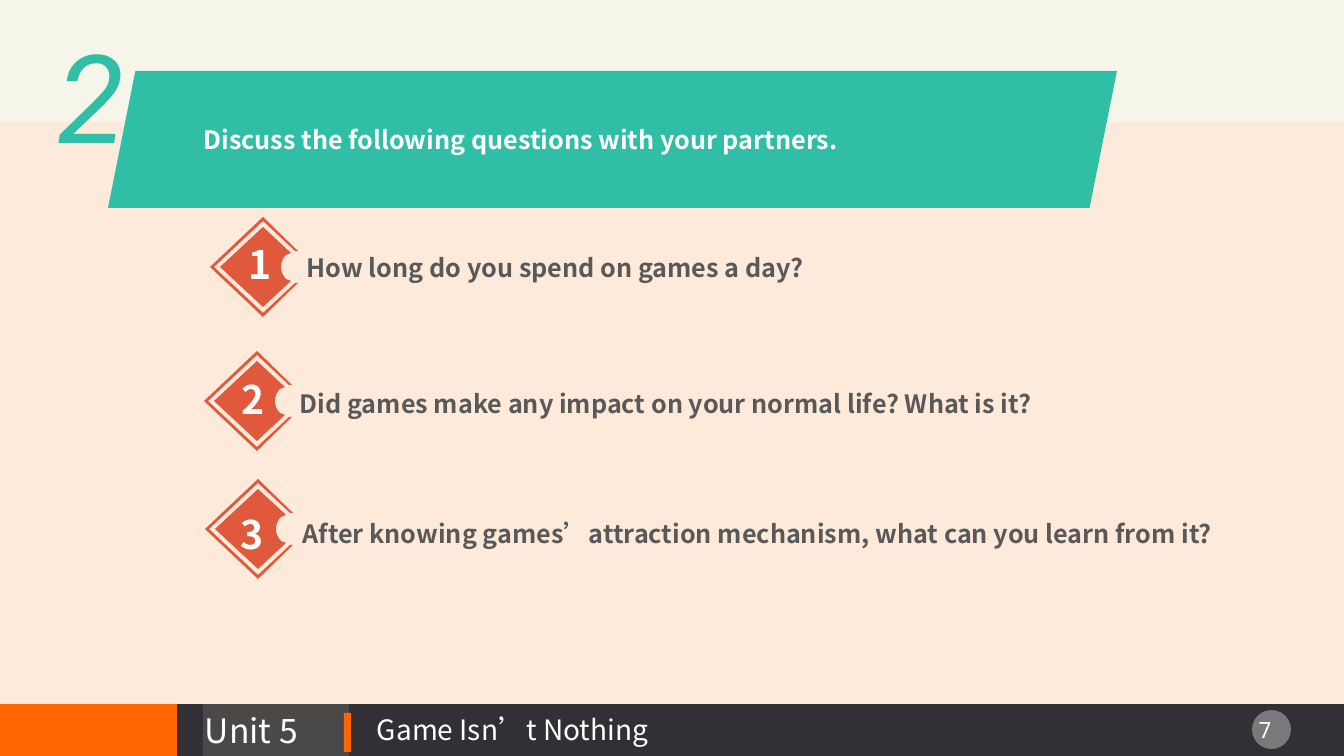
"""Builds the discussion slide with three numbered questions and a unit footer."""
from math import cos, radians, sin

from lxml import etree
from pptx import Presentation
from pptx.dml.color import RGBColor
from pptx.enum.shapes import MSO_SHAPE
from pptx.enum.text import MSO_ANCHOR, PP_ALIGN
from pptx.oxml.ns import qn
from pptx.util import Emu, Pt

RECT, OVAL = MSO_SHAPE.RECTANGLE, MSO_SHAPE.OVAL
PARALLELOGRAM = MSO_SHAPE.PARALLELOGRAM
LEFT, CENTER = PP_ALIGN.LEFT, PP_ALIGN.CENTER
TOP, MIDDLE = MSO_ANCHOR.TOP, MSO_ANCHOR.MIDDLE
SANS = "Noto Sans CJK SC"
CREAM, PEACH, TEAL, RED = "F5F5EA", "FDEADA", "31BEA6", "E0593C"
ORANGE, DARK, GREY, WHITE = "FF6600", "323034", "595959", "FFFFFF"
QUESTIONS = [
    ("1", (263, 267), (239, 235), (297, 247), "How long do you spend on games a day?"),
    ("2", (257, 401), (232, 370), (290, 383),
     "Did games make any impact on your normal life? What is it?"),
    ("3", (258, 529), (231, 505), (293, 513),
     "After knowing games’attraction mechanism, what can you learn from it?"),
]


def px(n):
    """Turn pixels into EMU."""
    return Emu(round(n * 914400 / 100.8))


def rgb(color):
    """Turn a hex string into a colour."""
    return RGBColor.from_string(color)


def paint(sp, color, alpha=None):
    """Give a shape a flat fill, with no line or shadow."""
    sp.shadow.inherit = False
    sp.line.fill.background()
    sp.fill.solid()
    sp.fill.fore_color.rgb = rgb(color)
    if alpha:
        clr = sp.fill._xPr.find(".//" + qn("a:srgbClr"))
        etree.SubElement(clr, qn("a:alpha")).set("val", str(alpha * 1000))


def add_block(s, kind, x, y, w, h, color, alpha=None):
    """Add a filled preset shape."""
    sp = s.shapes.add_shape(kind, px(x), px(y), px(w), px(h))
    paint(sp, color, alpha)
    return sp


def write(sp, text, size, color, font=SANS, bold=False, italic=False,
          align=LEFT, anchor=TOP, wrap=True, inset=True):
    """Put one styled paragraph into a shape."""
    tf = sp.text_frame
    tf.word_wrap = wrap
    tf.vertical_anchor = anchor
    if not inset:
        tf.margin_left = tf.margin_right = tf.margin_top = tf.margin_bottom = 0
    p = tf.paragraphs[0]
    p.text = text
    p.alignment = align
    p.font.name, p.font.size = font, Pt(size)
    p.font.bold, p.font.italic = bold, italic
    p.font.color.rgb = rgb(color)


def add_text(s, x, y, w, h, text, size, color, **style):
    """Add a text box."""
    sp = s.shapes.add_textbox(px(x), px(y), px(w), px(h))
    write(sp, text, size, color, **style)


def add_diamond(s, cx, cy):
    """Add a notched diamond inside an open diamond frame."""
    notch = [(35 + 17 * cos(radians(a)), 17 * sin(radians(a)))
             for a in range(135, 226, 10)]
    core = [(-43, 0), (0, -40), (28, -14), *reversed(notch), (28, 14), (0, 40)]
    frame = [(-53, 0), (0, -50), (35, -16), (32, -16), (0, -46), (-49, 0),
             (0, 46), (32, 16), (35, 16), (0, 50)]
    core, frame = ([(px(cx + x), px(cy + y)) for x, y in part]
                   for part in (core, frame))
    fb = s.shapes.build_freeform(*core[0])
    fb.add_line_segments(core[1:])
    fb.move_to(*frame[0])
    fb.add_line_segments(frame[1:])
    paint(fb.convert_to_shape(), RED)


def add_footer(s):
    """Add the footer bar with unit, title and page number."""
    add_block(s, RECT, 176, 704, 1168, 52, DARK)
    add_block(s, RECT, 0, 704, 177, 52, ORANGE)
    add_block(s, OVAL, 1252, 710, 39, 39, WHITE, 35)
    add_text(s, 1229, 711, 72, 37, "7", 16, WHITE, font="Noto Sans Mono", align=CENTER)
    add_block(s, RECT, 203, 704, 146, 52, GREY, 62)
    add_text(s, 195, 705, 173, 50, "Unit 5", 24, WHITE,
             font="Noto Sans CJK JP", anchor=MIDDLE)
    add_text(s, 367, 708, 333, 44, "Game Isn’t Nothing", 20, WHITE)
    add_block(s, RECT, 344, 713, 7, 39, ORANGE)


def add_heading(s):
    """Add the teal heading band and its section number."""
    band = add_block(s, PARALLELOGRAM, 108, 71, 1009, 137, TEAL)
    band.adjustments[0] = 0.2
    write(band, "Discuss the following questions with your partners.", 18, WHITE,
          bold=True, anchor=MIDDLE, inset=False)
    add_text(s, 24, 28, 134, 132, "2", 88, TEAL, font="Roboto", italic=True,
             align=CENTER, anchor=MIDDLE, inset=False)


def main():
    """Build and save the slide."""
    prs = Presentation()
    prs.slide_width, prs.slide_height = px(1344), px(756)
    s = prs.slides.add_slide(prs.slide_layouts[6])
    s.background.fill.solid()
    s.background.fill.fore_color.rgb = rgb(CREAM)
    add_footer(s)
    add_block(s, RECT, 0, 122, 1344, 582, PEACH)
    add_heading(s)
    for number, center, number_at, text_at, question in QUESTIONS:
        add_diamond(s, *center)
        add_text(s, *number_at, 48, 57, number, 28, WHITE, bold=True)
        add_text(s, *text_at, 990, 40, question, 18, GREY, bold=True, wrap=False)
    prs.save("out.pptx")


if __name__ == "__main__":
    main()
